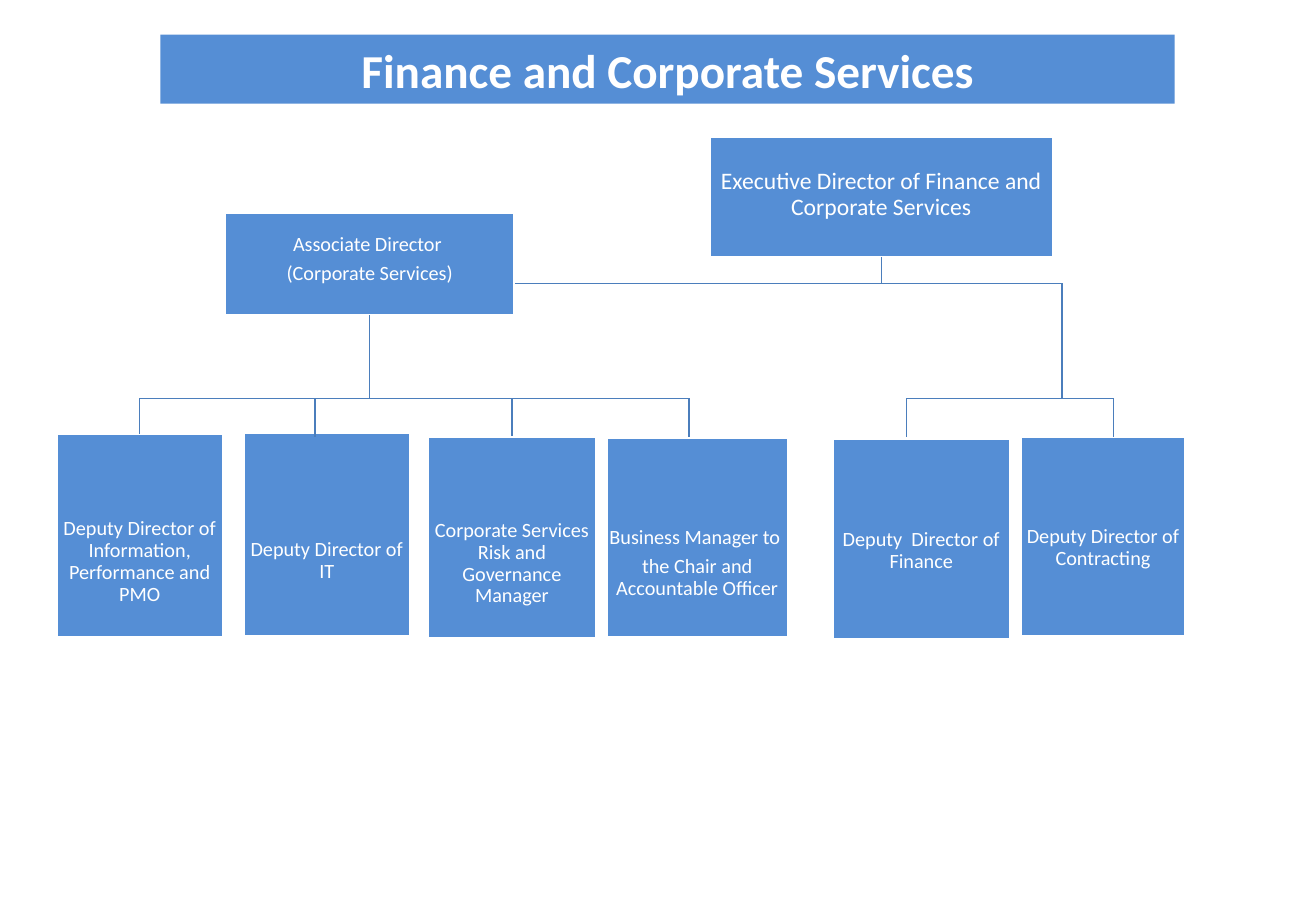
from pptx import Presentation
from pptx import util as u
from pptx.dml.color import RGBColor
from pptx.enum import shapes, text
from pptx.oxml.ns import qn
from lxml import etree

Pt = u.Pt
COLORS = {"box": "558ED5", "edge": "FFFFFF", "text": "FFFFFF", "link": "4B7EBC"}
RGB = {name: RGBColor.from_string(value) for name, value in COLORS.items()}

prs = Presentation()
prs.slide_width, prs.slide_height = Pt(780), Pt(540)
s = prs.slides.add_slide(prs.slide_layouts[5])


def write(tf, lines, size, bold=False, **paragraph_format):
    for i, line in enumerate(lines):
        p = tf.paragraphs[0] if i == 0 else tf.add_paragraph()
        p.alignment = text.PP_ALIGN.CENTER
        for key, value in paragraph_format.items():
            setattr(p, key, value)
        if i:
            p.space_before = Pt(4.2)
        r = p.add_run()
        r.text = line
        for key, value in {"name": "Calibri", "size": Pt(size), "bold": bold}.items():
            setattr(r.font, key, value)
        r.font.color.rgb = RGB["text"]


def link(x1, y1, x2, y2, parent=None, child=None):
    c = s.shapes.add_connector(shapes.MSO_CONNECTOR.STRAIGHT, Pt(x1), Pt(y1), Pt(x2), Pt(y2))
    c.line.color.rgb = RGB["link"]
    c.line.width = Pt(0.75)
    etree.SubElement(c._element.spPr, qn("a:effectLst"))
    if parent:
        c.begin_connect(boxes[parent], 2)
    if child:
        c.end_connect(boxes[child], 0)


# Title banner
title = s.shapes.title
for key, value in {"left": 95, "top": 20.5, "width": 601.2, "height": 41}.items():
    setattr(title, key, Pt(value))
title.fill.solid()
title.fill.fore_color.rgb = RGB["box"]
title.text_frame.auto_size = text.MSO_AUTO_SIZE.NONE
title.text_frame.vertical_anchor = text.MSO_ANCHOR.MIDDLE
write(title.text_frame, ["Finance and Corporate Services"], 28, bold=True)

# Posts: left, top, width, height, top inset, text size, lines
posts = {
    "executive": (420.5, 80.6, 203.8, 72, 3, 14,
                  ["Executive Director of Finance and Corporate Services"]),
    "associate": (133.2, 126, 172, 61, 0, 12,
                  ["Associate Director ", "(Corporate Services)"]),
    "information": (33.1, 257, 99.4, 121, 36, 12,
                    ["Deputy Director of Information, Performance and PMO"]),
    "it": (144, 256.5, 99.4, 121, 36, 12, ["Deputy Director of IT"]),
    "risk": (253.4, 258.5, 100.1, 120.2, 36, 12,
             ["Corporate Services Risk and Governance Manager"]),
    "business": (359.3, 259.2, 108, 118.8, 36, 12,
                 ["Business Manager to ", "the Chair and Accountable Officer"]),
    "finance": (493.2, 259.9, 105.8, 119.5, 18.5, 12, ["Deputy  Director of Finance"]),
    "contracting": (604.8, 258.5, 98, 118.8, 18.5, 12, ["Deputy Director of Contracting"]),
}
boxes = {}
for post, (x, y, w, h, inset, size, lines) in posts.items():
    sp = s.shapes.add_shape(shapes.MSO_SHAPE.RECTANGLE, Pt(x), Pt(y), Pt(w), Pt(h))
    sp.shadow.inherit = False
    sp.fill.solid()
    sp.fill.fore_color.rgb = RGB["box"]
    sp.line.color.rgb = RGB["edge"]
    sp.line.width = Pt(2)
    tf = sp.text_frame
    for key, value in {"word_wrap": True, "vertical_anchor": text.MSO_ANCHOR.MIDDLE,
                       "margin_left": 0, "margin_right": 0,
                       "margin_top": Pt(inset), "margin_bottom": Pt(5)}.items():
        setattr(tf, key, value)
    write(tf, lines, size, line_spacing=0.9)
    boxes[post] = sp

# Links from the executive director
upper, lower, row = 168, 236.2, 259
executive_x, associate_x, right_x = 522.4, 219.2, 629.5
link(executive_x, 152.6, executive_x, upper, parent="executive")
link(305.2, upper, right_x, upper)
link(right_x, upper, right_x, lower)

# Links from the associate director
link(associate_x, 187, associate_x, lower, parent="associate")

# Bars and drops to the lower row
teams = [
    [(82.8, "information"), (186.7, None), (303.45, "risk"), (408.4, None)],
    [(537.2, None), (660.2, None)],
]
for drops in teams:
    link(drops[0][0], lower, drops[-1][0], lower)
    for x, child in drops:
        link(x, lower, x, row, child=child)

prs.save("out.pptx")
